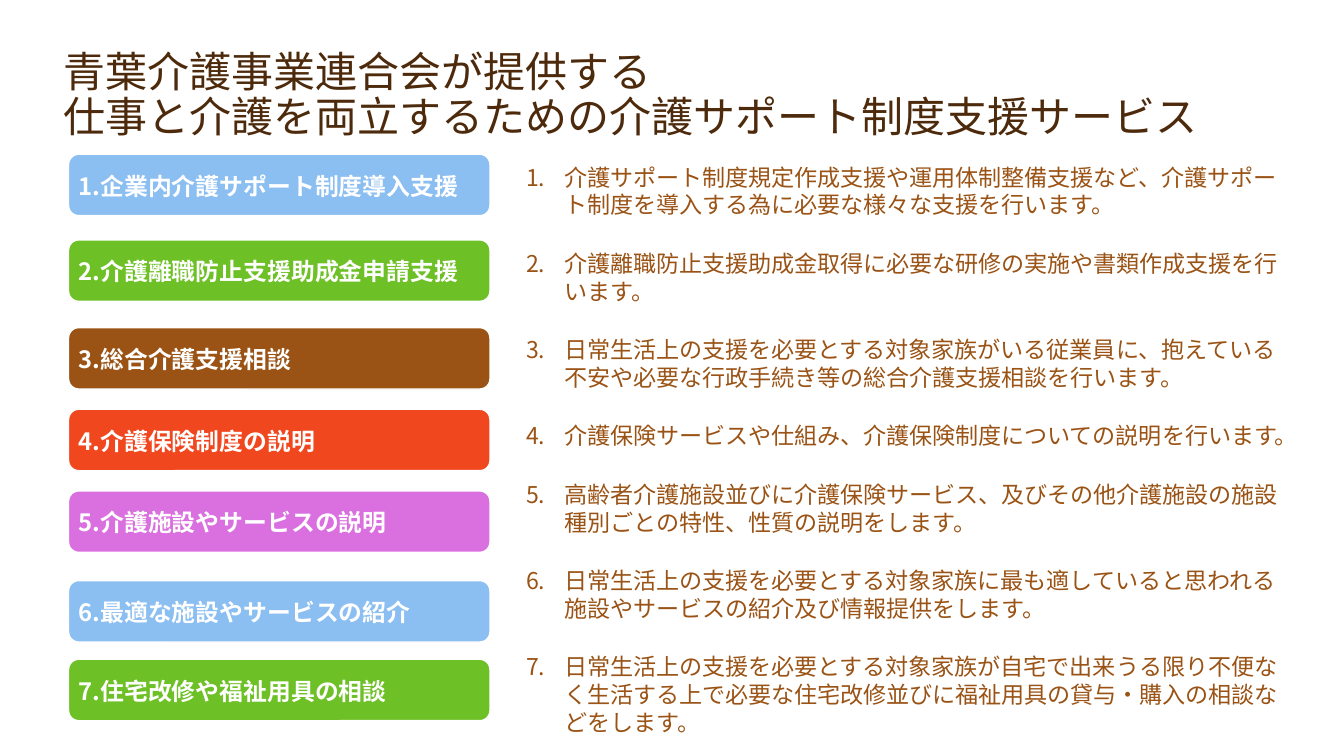
"""Build the slide that lists seven care support services."""
import pptx
import pptx.dml.color
import pptx.enum.shapes
import pptx.enum.text
import pptx.oxml.ns
import pptx.util
from lxml import etree

Inches = pptx.util.Inches
Pt = pptx.util.Pt
RGBColor = pptx.dml.color.RGBColor
Shape = pptx.enum.shapes.MSO_SHAPE
Anchor = pptx.enum.text.MSO_ANCHOR
qn = pptx.oxml.ns.qn

WHITE = RGBColor(0xFF, 0xFF, 0xFF)
DARK = RGBColor(0x4D, 0x2A, 0x0B)
BROWN = RGBColor(0x9A, 0x53, 0x15)
BLUE = RGBColor(0x8B, 0xBE, 0xF1)
GREEN = RGBColor(0x6D, 0xC0, 0x25)
RED = RGBColor(0xF1, 0x47, 0x1F)
PINK = RGBColor(0xDA, 0x6F, 0xDF)

TITLE = [
    "青葉介護事業連合会が提供する",
    "仕事と介護を両立するための介護サポート制度支援サービス",
]
SERVICES = [
    (1.53, BLUE, "企業内介護サポート制度導入支援",
     "介護サポート制度規定作成支援や運用体制整備支援など、介護サポート制度を導入する為に必要な様々な支援を行います。"),
    (2.38, GREEN, "介護離職防止支援助成金申請支援",
     "介護離職防止支援助成金取得に必要な研修の実施や書類作成支援を行います。"),
    (3.25, BROWN, "総合介護支援相談",
     "日常生活上の支援を必要とする対象家族がいる従業員に、抱えている不安や必要な行政手続き等の総合介護支援相談を行います。"),
    (4.06, RED, "介護保険制度の説明",
     "介護保険サービスや仕組み、介護保険制度についての説明を行います。"),
    (4.87, PINK, "介護施設やサービスの説明",
     "高齢者介護施設並びに介護保険サービス、及びその他介護施設の施設種別ごとの特性、性質の説明をします。"),
    (5.76, BLUE, "最適な施設やサービスの紹介",
     "日常生活上の支援を必要とする対象家族に最も適していると思われる施設やサービスの紹介及び情報提供をします。"),
    (6.54, GREEN, "住宅改修や福祉用具の相談",
     "日常生活上の支援を必要とする対象家族が自宅で出来うる限り不便なく生活する上で必要な住宅改修並びに福祉用具の貸与・購入の相談などをします。"),
]


def write(frame, lines, size, color, font, bold=False, anchor=Anchor.TOP,
          inset=(0.1, 0.05, 0.1, 0.05), pitch=1.0, before=0, after=0, hang=0):
    frame.word_wrap = True
    frame.auto_size = pptx.enum.text.MSO_AUTO_SIZE.NONE
    frame.vertical_anchor = anchor
    (frame.margin_left, frame.margin_top,
     frame.margin_right, frame.margin_bottom) = map(Inches, inset)
    for i, line in enumerate(lines):
        para = frame.add_paragraph() if i else frame.paragraphs[0]
        para.alignment = pptx.enum.text.PP_ALIGN.LEFT
        if hang:
            props = para._p.get_or_add_pPr()
            props.set("marL", str(Inches(hang)))
            props.set("indent", str(-Inches(hang)))
            etree.SubElement(props, qn("a:buFont"), typeface="+mj-lt")
            etree.SubElement(props, qn("a:buAutoNum"), type="arabicPeriod")
        para.line_spacing = pitch
        para.space_before = Pt(before if i else 0)
        para.space_after = Pt(after)
        run = para.add_run()
        run.text = line
        run.font.size = Pt(size)
        run.font.bold = bold
        run.font.name = font
        run.font.color.rgb = color
        etree.SubElement(run._r.get_or_add_rPr(), qn("a:ea"), typeface=font)


class Deck:
    """Hold the style and the current slide."""

    def __init__(self, font):
        self.font = font
        self.show = pptx.Presentation()
        self.show.slide_width = Inches(13.33)
        self.show.slide_height = Inches(7.5)
        self.slide = self.show.slides.add_slide(self.show.slide_layouts[5])

    def title(self, lines, left, top, width, height):
        box = self.slide.shapes.title
        box.left, box.top = Inches(left), Inches(top)
        box.width, box.height = Inches(width), Inches(height)
        write(box.text_frame, lines, 30, DARK, self.font,
              anchor=Anchor.BOTTOM, pitch=0.9)

    def block(self, kind, left, top, width, height, fill):
        shape = self.slide.shapes.add_shape(
            kind, Inches(left), Inches(top), Inches(width), Inches(height))
        shape.shadow.inherit = False
        shape.fill.solid()
        shape.fill.fore_color.rgb = fill
        return shape

    def chip(self, text, top, fill):
        shape = self.block(Shape.ROUNDED_RECTANGLE, 0.68, top, 4.18, 0.61, fill)
        shape.line.color.rgb = WHITE
        shape.line.width = Pt(1)
        write(shape.text_frame, [text], 17, WHITE, self.font, bold=True,
              anchor=Anchor.MIDDLE, inset=(0.07, 0.12, 0.07, 0.07), pitch=0.9)

    def notes(self, lines, left, top, width, height):
        shape = self.block(Shape.RECTANGLE, left, top, width, height, WHITE)
        shape.line.fill.background()
        tint = shape._element.spPr.find(qn("a:solidFill"))[0]
        etree.SubElement(tint, qn("a:alpha"), val="55000")
        write(shape.text_frame, lines, 16.5, BROWN, self.font,
              before=18, after=4, hang=0.38)


def main():
    deck = Deck("Noto Sans CJK JP")
    deck.title(TITLE, 0.53, 0.33, 11.81, 1.13)
    deck.notes([note for *_, note in SERVICES], 5.12, 1.57, 7.81, 5.77)
    for number, (top, fill, name, _) in enumerate(SERVICES, 1):
        deck.chip(f"{number}.{name}", top, fill)
    deck.show.save("out.pptx")


if __name__ == "__main__":
    main()
